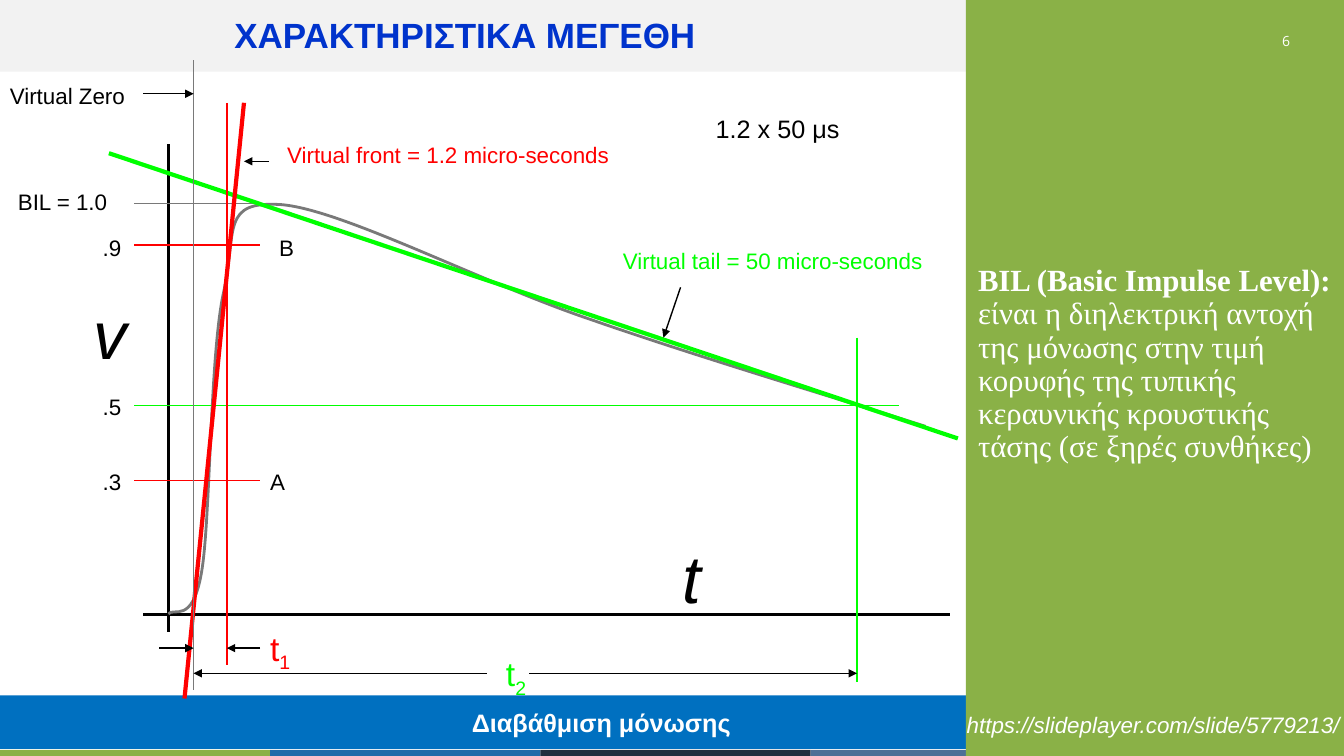
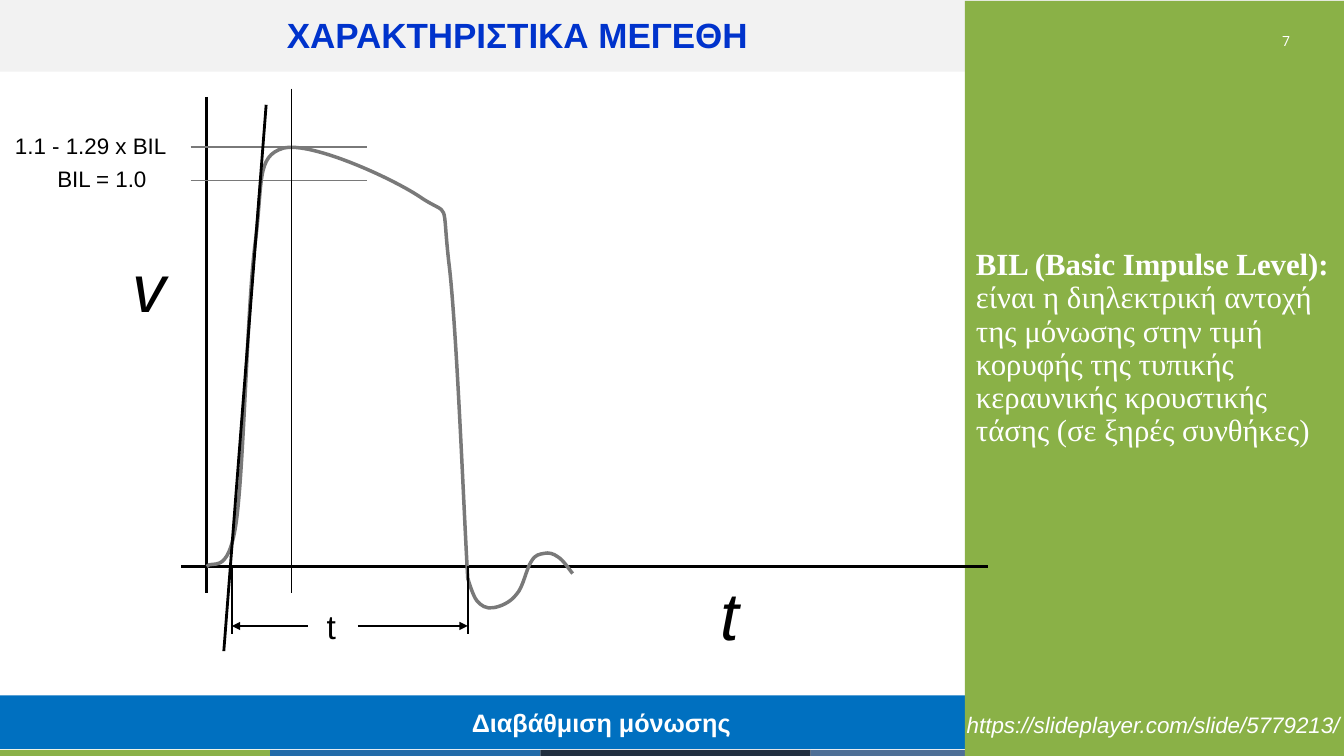
from lxml import etree
from pptx import Presentation
from pptx.dml.color import RGBColor
from pptx.enum import shapes, text
from pptx.oxml.ns import qn
from pptx.util import Pt

PX = 9144
WIDE, HIGH = 1333, 750
BLACK, WHITE, GRAY = "000000", "FFFFFF", "797979"
RED, LIME, GREEN, NAVY = "FF0000", "00FF00", "8AB147", "0033CC"
STRIPS = [GREEN, "216BA9", "212F3F", "4D6F96"]
TITLE = "ΧΑΡΑΚΤΗΡΙΣΤΙΚΑ ΜΕΓΕΘΗ"
TERM = "BIL (Basic Impulse Level): "
MEANING = ("είναι η διηλεκτρική αντοχή της μόνωσης στην τιμή κορυφής της τυπικής "
           "κεραυνικής κρουστικής τάσης (σε ξηρές συνθήκες)")
LINK = "https://slideplayer.com/slide/5779213/"
CENTER, LEFT = text.PP_ALIGN.CENTER, text.PP_ALIGN.LEFT
MIDDLE, TOP, BOTTOM = (text.MSO_ANCHOR.MIDDLE, text.MSO_ANCHOR.TOP,
                       text.MSO_ANCHOR.BOTTOM)


def color(code):
    return RGBColor.from_string(code)


def place(shape, *box):
    shape.left, shape.top, shape.width, shape.height = (n * PX for n in box)


def style(font, size, code, bold=False, italic=False, name="Arial"):
    font.size, font.name = Pt(size), name
    font.bold, font.italic = bold, italic
    font.color.rgb = color(code)


def fit(frame, anchor=TOP, side=10, edge=5, wrap=True):
    """Set anchor, insets and wrapping of a text frame."""
    frame.auto_size = text.MSO_AUTO_SIZE.NONE
    frame.word_wrap, frame.vertical_anchor = wrap, anchor
    frame.margin_left = frame.margin_right = side * PX
    frame.margin_top = frame.margin_bottom = edge * PX


class Deck:
    def __init__(self, first):
        self.file = Presentation()
        self.file.slide_width, self.file.slide_height = WIDE * PX, HIGH * PX
        self.page = first

    def start(self, panel, span, body):
        """Add a slide with the shared bands, title, side text and footer."""
        slide = self.file.slides.add_slide(self.file.slide_layouts[1])
        self.shapes = slide.shapes
        for i, code in enumerate(STRIPS):
            self.rect(i * 268, 744, 268, 6, code)
        self.rect(0, 690, WIDE, 53, "0070C0")
        self.label(80, 703, 1033, "Διαβάθμιση μόνωσης", 18, WHITE, high=28,
                   bold=True, align=CENTER, anchor=MIDDLE, edge=0)
        self.rect(0, 0, WIDE, 71, "F2F2F2")
        self.rect(panel[0], panel[1], WIDE - panel[0], HIGH - panel[1], GREEN)
        self.label(1253, 12, 45, str(self.page), 10, WHITE, high=57,
                   name="Open Sans", align=CENTER, anchor=MIDDLE, side=0)
        self.page += 1
        self.title(span)
        self.body(*body)
        self.label(949, 701, 384, LINK, 16, WHITE, italic=True, wrap=False)

    def raised(self, shape):
        """Bring a placeholder in front of the bands."""
        shape._element.getparent().append(shape._element)
        return shape

    def title(self, wide):
        shape = self.raised(self.shapes.title)
        place(shape, 70, 8, wide, 52)
        fit(shape.text_frame, BOTTOM)
        shape.text_frame.text = TITLE
        para = shape.text_frame.paragraphs[0]
        para.alignment = CENTER
        style(para.runs[0].font, 25, NAVY, bold=True)

    def body(self, x, y):
        shape = self.raised(self.shapes.placeholders[1])
        place(shape, x, y, WIDE - x, 210)
        fit(shape.text_frame)
        shape.text_frame.margin_right = 0
        para = shape.text_frame.paragraphs[0]
        props = para._p.get_or_add_pPr()
        props.set("marL", "0")
        props.set("indent", "0")
        etree.SubElement(props, qn("a:buNone"))
        para.line_spacing, para.space_before = 0.9, Pt(0)
        para.alignment = LEFT
        for words, bold in ((TERM, True), (MEANING, False)):
            run = para.add_run()
            run.text = words
            style(run.font, 22, WHITE, bold, name="Times New Roman")

    def rect(self, x, y, wide, high, code):
        shape = self.shapes.add_shape(shapes.MSO_SHAPE.RECTANGLE,
                                      x * PX, y * PX, wide * PX, high * PX)
        shape.shadow.inherit = False
        shape.fill.solid()
        shape.fill.fore_color.rgb = color(code)
        shape.line.fill.background()

    def label(self, x, y, wide, words, size=16, code=BLACK, high=None, sub="",
              bold=False, italic=False, name="Arial", align=LEFT, **frame):
        high = high or round(size * 5 / 3 + 10)
        box = self.shapes.add_textbox(x * PX, y * PX, wide * PX, high * PX)
        fit(box.text_frame, **frame)
        para = box.text_frame.paragraphs[0]
        para.text, para.alignment = words, align
        if sub:
            run = para.add_run()
            run.text = sub
            run._r.get_or_add_rPr().set("baseline", "-25000")
        for run in para.runs:
            style(run.font, size, code, bold, italic, name)

    def line(self, x1, y1, x2, y2, code=BLACK, width=1, arrow=False):
        link = self.shapes.add_connector(shapes.MSO_CONNECTOR.STRAIGHT,
                                         x1 * PX, y1 * PX, x2 * PX, y2 * PX)
        link.line.color.rgb, link.line.width = color(code), Pt(width)
        if arrow:
            tip = etree.SubElement(link.line._get_or_add_ln(), qn("a:tailEnd"))
            tip.set("type", "triangle")
        etree.SubElement(link._element.spPr, qn("a:effectLst"))

    def arrow(self, *ends):
        self.line(*ends, arrow=True)

    def curve(self, width, first, *rest):
        """Draw cubic arcs: each takes two control points and an end."""
        pen = self.shapes.build_freeform(*first, scale=PX)
        pen.add_line_segments(rest, close=False)
        shape = pen.convert_to_shape()
        shape.shadow.inherit = False
        shape.fill.background()
        shape.line.color.rgb, shape.line.width = color(GRAY), Pt(width)
        trace = shape._element.xpath(".//a:path")[0]
        steps = trace.findall(qn("a:lnTo"))
        for i in range(0, len(steps), 3):
            arc = etree.SubElement(trace, qn("a:cubicBezTo"))
            for step in steps[i:i + 3]:
                arc.append(step[0])
                trace.remove(step)

    def axes(self, x, top, low, left, right, base):
        self.line(x, top, x, low, width=2.25)
        self.line(left, base, right, base, width=2.25)

    def names(self, v, t):
        """Write the letters of the two axes."""
        self.label(*v, 50, "v", 48, italic=True, wrap=False)
        self.label(*t, 39, "t", 48, italic=True)


def full_wave(deck):
    deck.start((958, 0), 782, (960, 258))
    deck.axes(167, 143, 627, 142, 942, 610)
    deck.curve(2, (167, 609), (172, 602), (191, 621), (200, 567),
               (209, 514), (208, 350), (222, 289),
               (235, 228), (219, 199), (279, 203),
               (340, 208), (479, 281), (586, 317),
               (692, 354), (849, 401), (918, 423))
    for y, end, code, width in ((202, 258, GRAY, 1), (402, 892, LIME, 0.5),
                                (243, 258, RED, 1), (477, 258, RED, 1)):
        deck.line(133, y, end, y, code, width)
    for x, y, wide, words in ((8, 182, 133, "BIL = 1.0"), (92, 227, 58, ".9"),
                              (92, 385, 50, ".5"), (92, 460, 58, ".3"),
                              (258, 460, 42, "A"), (267, 227, 42, "B"),
                              (0, 77, 150, "Virtual Zero")):
        deck.label(x, y, wide, words)
    deck.line(850, 335, 850, 677, LIME)
    deck.line(950, 435, 108, 152, LIME, 3)
    deck.line(242, 102, 183, 693, RED, 3)
    deck.line(225, 102, 225, 660, RED)
    deck.line(192, 60, 192, 685, GRAY)
    deck.label(608, 240, 342, "Virtual tail = 50 micro-seconds", code=LIME)
    deck.label(275, 135, 358, "Virtual front = 1.2 micro-seconds", code=RED)
    deck.label(258, 618, 42, "t", 24, RED, sub="1")
    deck.label(492, 643, 42, "t", 24, LIME, sub="2")
    for ends in ((483, 668, 192, 668), (525, 668, 850, 668),
                 (675, 285, 658, 335), (267, 160, 242, 160),
                 (258, 643, 225, 643), (158, 643, 192, 643),
                 (142, 93, 192, 93)):
        deck.arrow(*ends)
    deck.names((83, 285), (667, 527))
    deck.label(700, 108, 144, "1.2 x 50 μs", 18, wrap=False)


def chopped_wave(deck):
    deck.start((957, 1), 886, (958, 242))
    deck.axes(205, 96, 588, 180, 980, 562)
    deck.curve(2.5, (205, 562), (210, 555), (226, 573), (234, 520),
               (242, 467), (245, 304), (253, 242),
               (261, 180), (254, 155), (281, 147),
               (309, 140), (392, 178), (419, 197),
               (447, 215), (438, 196), (445, 259),
               (453, 322), (460, 509), (464, 575))
    deck.curve(2.5, (464, 574), (465, 577), (469, 591), (473, 596),
               (477, 601), (482, 604), (489, 603),
               (496, 602), (506, 598), (512, 590),
               (519, 583), (522, 564), (527, 557),
               (531, 550), (535, 550), (540, 549),
               (544, 548), (549, 549), (554, 553),
               (559, 556), (566, 567), (568, 569))
    for y in (146, 179):
        deck.line(189, y, 364, y, GRAY)
    deck.label(5, 126, 183, "1.1 - 1.29 x BIL")
    deck.label(47, 159, 133, "BIL = 1.0")
    deck.names((122, 238), (705, 564))
    deck.line(289, 88, 289, 588)
    for x, start in ((230, 305), (464, 355)):
        deck.line(x, 562, x, 629)
        deck.arrow(start, 621, x, 621)
    deck.label(314, 596, 29, "t", 24, wrap=False)
    deck.line(264, 104, 222, 646, width=2)


def main():
    deck = Deck(first=6)
    full_wave(deck)
    chopped_wave(deck)
    deck.file.save("out.pptx")


if __name__ == "__main__":
    main()
